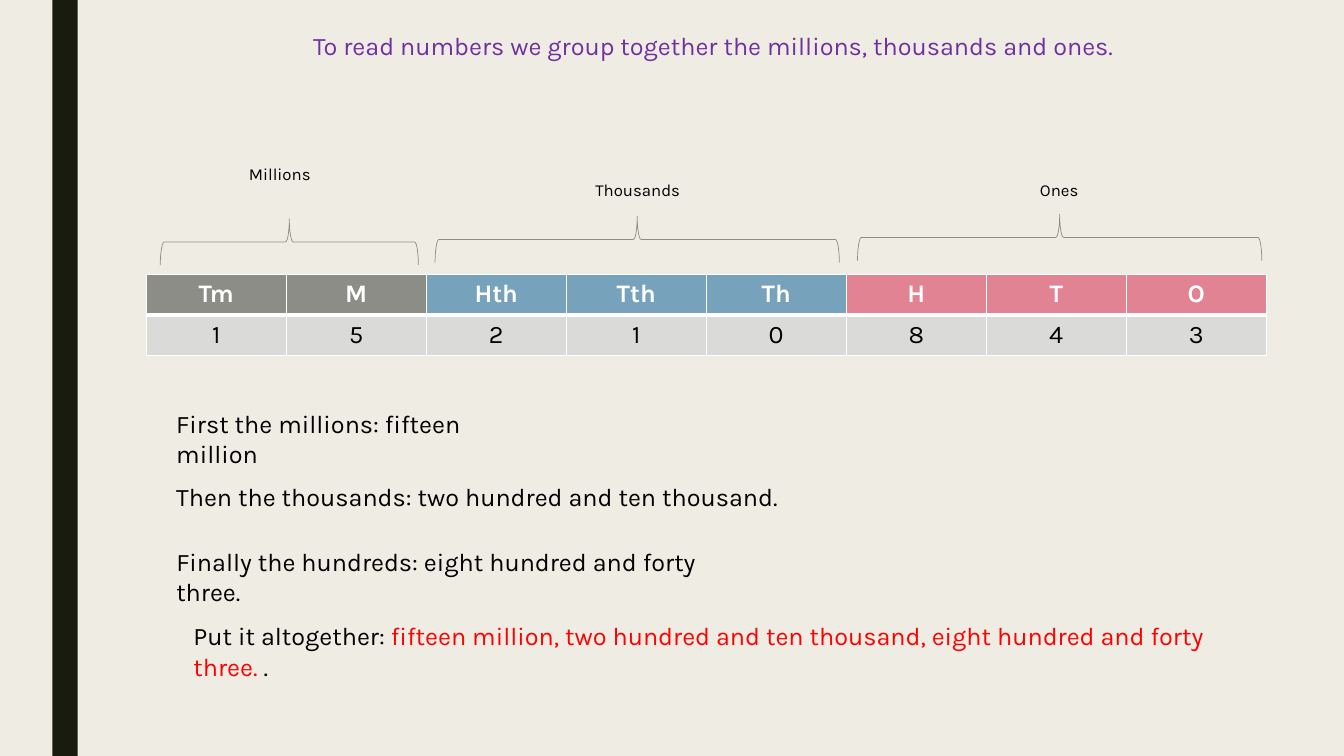
"""Build a slide on reading large numbers by millions, thousands and ones."""
import lxml.etree
import pptx
import pptx.dml.color
import pptx.enum.shapes
import pptx.enum.text
import pptx.oxml.ns
import pptx.util

Inches = pptx.util.Inches
Pt = pptx.util.Pt
RGB = pptx.dml.color.RGBColor.from_string
ALIGN = pptx.enum.text.PP_ALIGN
SHAPE = pptx.enum.shapes.MSO_SHAPE
COLORS = {
    "background": "EFEDE3", "bar": "191B0E", "grey": "8C8D86", "blue": "77A2BB",
    "pink": "E28394", "digits": "DADBD9", "purple": "7030A0", "red": "FF0000",
    "white": "FFFFFF", "black": "000000",
}


def add_text(tf, text, size=18, color="black", bold=False, align=ALIGN.LEFT):
    """Add a formatted run to the first paragraph of a text frame."""
    p = tf.paragraphs[0]
    p.alignment = align
    r = p.add_run()
    r.text = text
    r.font.name = "Karla"
    r.font.size = Pt(size)
    r.font.bold = bold
    r.font.color.rgb = RGB(COLORS[color])


def add_box(s, left, top, width, height):
    """Add a wrapping text box that grows with its text."""
    tf = s.shapes.add_textbox(Inches(left), Inches(top), Inches(width), Inches(height)).text_frame
    tf.word_wrap = True
    tf.auto_size = pptx.enum.text.MSO_AUTO_SIZE.SHAPE_TO_FIT_TEXT
    return tf


prs = pptx.Presentation()
prs.slide_width = Inches(13.33)
prs.slide_height = Inches(7.5)
s = prs.slides.add_slide(prs.slide_layouts[6])
s.background.fill.solid()
s.background.fill.fore_color.rgb = RGB(COLORS["background"])

sp = s.shapes.add_shape(SHAPE.RECTANGLE, Inches(0.52), 0, Inches(0.25), prs.slide_height)
sp.shadow.inherit = False
sp.fill.solid()
sp.fill.fore_color.rgb = RGB(COLORS["bar"])
sp.line.fill.background()

columns = [
    ("Tm", "1", "grey"), ("M", "5", "grey"),
    ("Hth", "2", "blue"), ("Tth", "1", "blue"), ("Th", "0", "blue"),
    ("H", "8", "pink"), ("T", "4", "pink"), ("O", "3", "pink"),
]
table = s.shapes.add_table(2, len(columns), Inches(1.45), Inches(2.72), Inches(11.11), Inches(0.81)).table
for col, (heading, digit, group) in enumerate(columns):
    for row, (text, fill, color) in enumerate([(heading, group, "white"), (digit, "digits", "black")]):
        cell = table.cell(row, col)
        cell.vertical_anchor = pptx.enum.text.MSO_ANCHOR.MIDDLE
        add_text(cell.text_frame, text, color=color, bold=row == 0, align=ALIGN.CENTER)
        thick = "lnB" if row == 0 else "lnT"
        tcPr = cell._tc.get_or_add_tcPr()
        for side in ("lnL", "lnR", "lnT", "lnB"):
            ln = lxml.etree.SubElement(tcPr, pptx.oxml.ns.qn(f"a:{side}"), w=str(Pt(3 if side == thick else 1)))
            solid = lxml.etree.SubElement(ln, pptx.oxml.ns.qn("a:solidFill"))
            lxml.etree.SubElement(solid, pptx.oxml.ns.qn("a:srgbClr"), val=COLORS["white"])
        cell.fill.solid()
        cell.fill.fore_color.rgb = RGB(COLORS[fill])

groups = [
    ("Millions", 1.65, 1.58, 2.64, 1.12, 2.56),
    ("Thousands", 5.2, 1.73, 6.09, 0.37, 4.01),
    ("Ones", 9.38, 1.73, 10.28, 0.35, 4.01),
]
for name, left, top, brace_left, brace_top, brace_length in groups:
    sp = s.shapes.add_shape(
        SHAPE.RIGHT_BRACE, Inches(brace_left), Inches(brace_top), Inches(0.46), Inches(brace_length))
    sp.rotation = 270
    sp.shadow.inherit = False
    sp.fill.background()
    sp.line.color.rgb = RGB(COLORS["grey"])
    sp.line.width = Pt(0.5)
    add_text(add_box(s, left, top, 2.25, 0.3), name, size=12, align=ALIGN.CENTER)

add_text(
    add_box(s, 2.08, 0.25, 10.05, 0.4),
    "To read numbers we group together the millions, thousands and ones. ",
    color="purple", align=ALIGN.CENTER)

steps = [
    (1.65, 4, 3.64, [("First the millions: fifteen million", "black")]),
    (1.65, 4.73, 6.26, [("Then the thousands: two hundred and ten thousand.", "black")]),
    (1.65, 5.37, 5.99, [("Finally the hundreds: eight hundred and forty three.", "black")]),
    (1.82, 6.11, 10.79, [
        ("Put it altogether: ", "black"),
        ("fifteen million, two hundred and ten thousand, eight hundred and forty three. ", "red"),
        (".", "black"),
    ]),
]
for left, top, width, runs in steps:
    tf = add_box(s, left, top, width, 0.4)
    for text, color in runs:
        add_text(tf, text, color=color)

prs.save("out.pptx")
